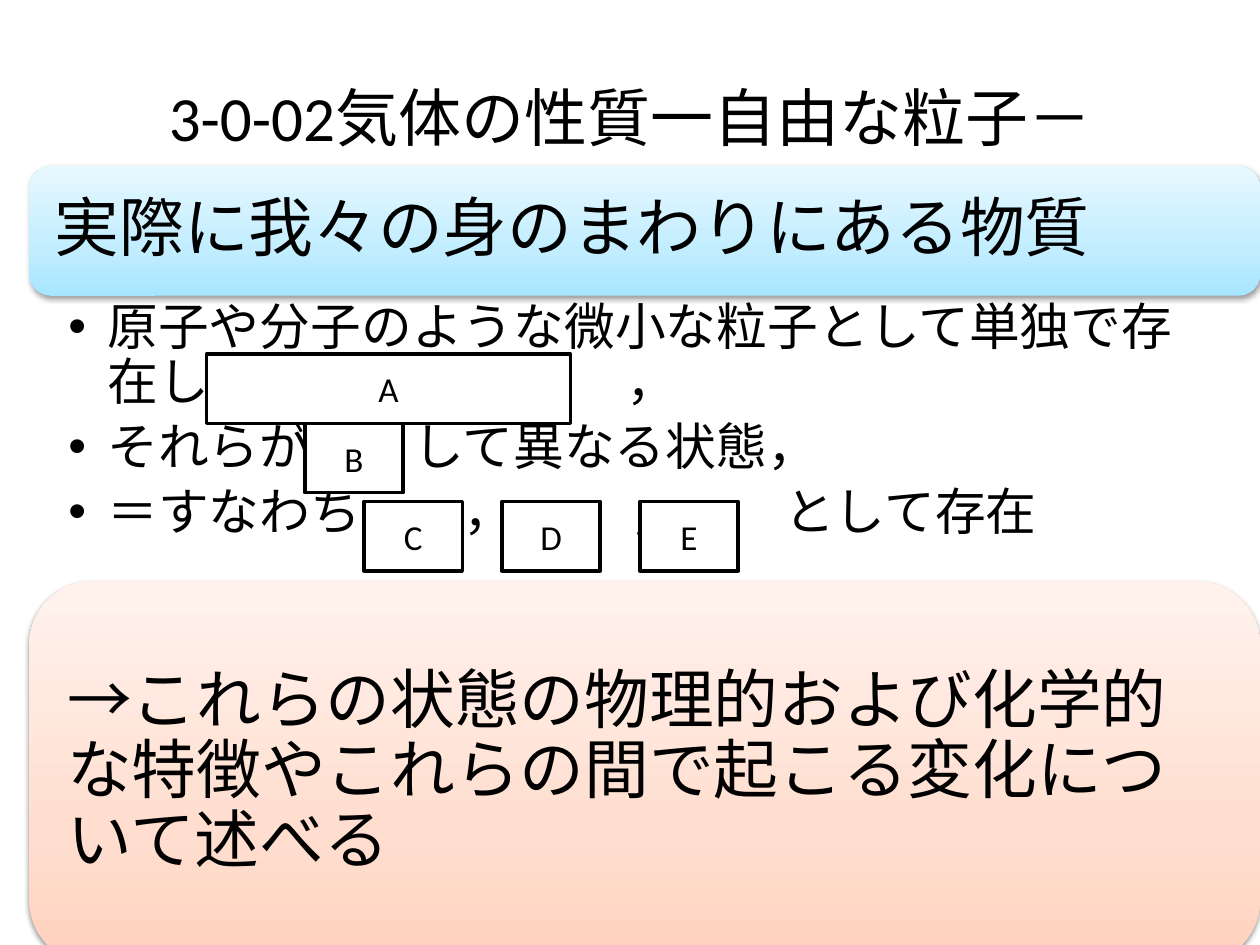
import pptx
import pptx.util
import pptx.dml.color
import pptx.enum.shapes
import pptx.enum.text
import pptx.oxml
import pptx.oxml.ns

Pt = pptx.util.Pt
RGBColor = pptx.dml.color.RGBColor
SHAPES = pptx.enum.shapes.MSO_SHAPE
ALIGN = pptx.enum.text.PP_ALIGN
ANCHOR = pptx.enum.text.MSO_ANCHOR

BLACK = RGBColor(0x00, 0x00, 0x00)
WHITE = RGBColor(0xFF, 0xFF, 0xFF)
BLUES = (RGBColor(0xA7, 0xE6, 0xFF), RGBColor(0xC1, 0xED, 0xFF), RGBColor(0xE7, 0xF8, 0xFF))
ORANGES = (RGBColor(0xFF, 0xD2, 0xBD), RGBColor(0xFF, 0xDE, 0xD0), RGBColor(0xFF, 0xF2, 0xED))
NAMESPACE = pptx.oxml.ns.nsdecls("a")


def write(box, lines, size, margins, anchor, para_format):
    frame = box.text_frame
    left, top, right, bottom = margins
    frame_format = {
        "word_wrap": True,
        "vertical_anchor": anchor,
        "margin_left": Pt(left),
        "margin_top": Pt(top),
        "margin_right": Pt(right),
        "margin_bottom": Pt(bottom),
    }
    for name, value in frame_format.items():
        setattr(frame, name, value)
    for index, line in enumerate(lines):
        para = frame.add_paragraph() if index else frame.paragraphs[0]
        for name, value in para_format.items():
            setattr(para, name, value)
        span = para.add_run()
        span.text = line
        for name, value in {"name": "Calibri", "size": Pt(size)}.items():
            setattr(span.font, name, value)
        span.font.color.rgb = BLACK


def add_panel(page, top, height, colors):
    panel = page.shapes.add_shape(
        SHAPES.ROUNDED_RECTANGLE, Pt(16.8), Pt(top), Pt(703.2), Pt(height)
    )
    panel.line.fill.background()
    stops = "".join(
        f'<a:gs pos="{position}"><a:srgbClr val="{color}"/></a:gs>'
        for position, color in zip((0, 35000, 100000), colors)
    )
    gradient = pptx.oxml.parse_xml(
        f'<a:gradFill {NAMESPACE} rotWithShape="1"><a:gsLst>{stops}</a:gsLst>'
        '<a:lin ang="16200000" scaled="0"/></a:gradFill>'
    )
    shadow = pptx.oxml.parse_xml(
        f'<a:effectLst {NAMESPACE}><a:outerShdw blurRad="{Pt(3.1)}" dist="{Pt(1.6)}" '
        'dir="5400000" rotWithShape="0"><a:srgbClr val="000000"><a:alpha val="38000"/>'
        "</a:srgbClr></a:outerShdw></a:effectLst>"
    )
    properties = panel.element.spPr
    properties.find(pptx.oxml.ns.qn("a:prstGeom")).addnext(gradient)
    properties.append(shadow)


deck = pptx.Presentation()
deck.slide_width = Pt(720)
deck.slide_height = Pt(540)
page = deck.slides.add_slide(deck.slide_layouts[6])

add_panel(page, 95, 74, BLUES)
heading = page.shapes.add_textbox(Pt(20.4), Pt(98.2), Pt(696.2), Pt(67))
write(heading, ["実際に我々の身のまわりにある物質"], 37, (11,) * 4, ANCHOR.MIDDLE, {"line_spacing": 0.9})

points = {
    "原子や分子のような微小な粒子として単独で存在して\t，": (319,),
    "それらが\tして異なる状態，": (197,),
    "＝すなわち\t，\t，\tとして存在": (226, 321, 409),
}
body = page.shapes.add_textbox(Pt(16.8), Pt(169), Pt(703.2), Pt(204))
body_format = {"line_spacing": 0.9, "space_after": Pt(5.8)}
write(body, points, 29, (22.3, 3.6, 21, 3.6), ANCHOR.TOP, body_format)
for para, tabs in zip(body.text_frame.paragraphs, points.values()):
    properties = para._p.get_or_add_pPr()
    properties.set("marL", str(Pt(22.3)))
    properties.set("indent", str(Pt(-22.3)))
    properties.append(pptx.oxml.parse_xml(f'<a:buFont {NAMESPACE} typeface="Arial"/>'))
    properties.append(pptx.oxml.parse_xml(f'<a:buChar {NAMESPACE} char="•"/>'))
    stops = "".join(f'<a:tab pos="{Pt(tab)}" algn="l"/>' for tab in tabs)
    properties.append(pptx.oxml.parse_xml(f"<a:tabLst {NAMESPACE}>{stops}</a:tabLst>"))

add_panel(page, 332, 219, ORANGES)
conclusion = page.shapes.add_textbox(Pt(27.5), Pt(342.5), Pt(682), Pt(197.5))
write(
    conclusion,
    ["→これらの状態の物理的および化学的な特徴やこれらの間で起こる変化について述べる"],
    37, (11,) * 4, ANCHOR.MIDDLE, {"line_spacing": 0.9},
)

centered = {"alignment": ALIGN.CENTER}
title = page.shapes.add_textbox(Pt(36), Pt(21.6), Pt(648), Pt(90))
write(title, ["3-0-02気体の性質一自由な粒子－"], 36, (7.2, 3.6, 7.2, 3.6), ANCHOR.MIDDLE, centered)

blanks = {
    "A": (118, 202.3, 208),
    "B": (174.2, 242, 56.2),
    "C": (208, 286.6, 56.2),
    "D": (286.8, 286.6, 56.2),
    "E": (365.6, 286.6, 56.2),
}
for letter, (left, top, width) in blanks.items():
    blank = page.shapes.add_shape(SHAPES.RECTANGLE, Pt(left), Pt(top), Pt(width), Pt(39.6))
    blank.shadow.inherit = False
    blank.fill.solid()
    blank.fill.fore_color.rgb = WHITE
    blank.line.color.rgb = BLACK
    blank.line.width = Pt(2)
    write(blank, [letter], 20, (7.2, 3.6, 7.2, 3.6), ANCHOR.MIDDLE, centered)

deck.save("out.pptx")
